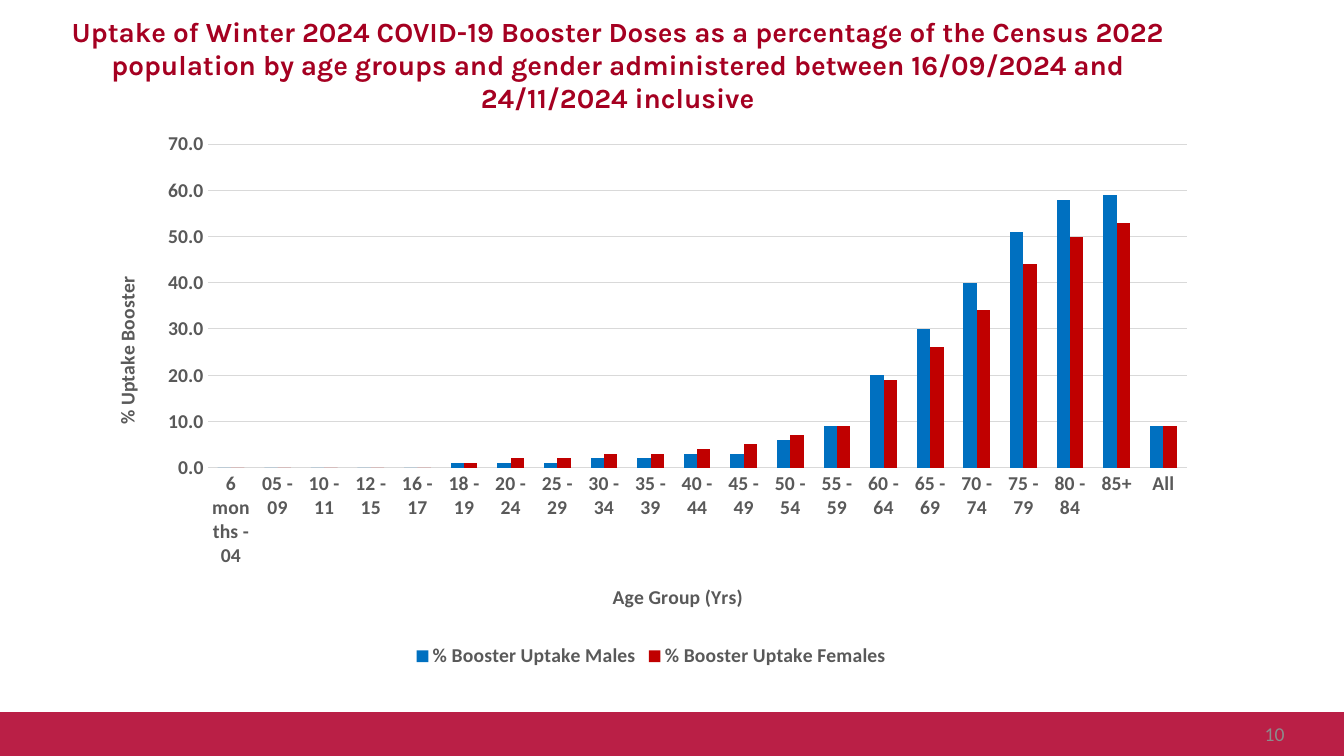
from lxml.etree import SubElement
from pptx import Presentation
from pptx.chart.data import CategoryChartData
from pptx.dml.color import RGBColor
from pptx.enum.chart import XL_CHART_TYPE, XL_LEGEND_POSITION, XL_TICK_MARK
from pptx.enum.shapes import MSO_SHAPE
from pptx.enum.text import MSO_ANCHOR, MSO_AUTO_SIZE, PP_ALIGN
from pptx.oxml import parse_xml
from pptx.oxml.ns import nsdecls, qn
from pptx.util import Inches, Pt

CRIMSON = RGBColor(0xA5, 0x00, 0x21)
BAND_RED = RGBColor(0xBA, 0x1F, 0x46)
NUMBER_GREY = RGBColor(0x8C, 0x8C, 0x8C)
LABEL_GREY = RGBColor(0x59, 0x59, 0x59)
GRID_GREY = RGBColor(0xD9, 0xD9, 0xD9)
MALE_BLUE = RGBColor(0x00, 0x70, 0xC0)
FEMALE_RED = RGBColor(0xC0, 0x00, 0x00)

CHART_WIDTH, CHART_HEIGHT = 11.08, 5.47
AGE_GROUPS = [
    "6 months - 04", "05 - 09", "10 - 11", "12 - 15", "16 - 17", "18 - 19", "20 - 24",
    "25 - 29", "30 - 34", "35 - 39", "40 - 44", "45 - 49", "50 - 54", "55 - 59",
    "60 - 64", "65 - 69", "70 - 74", "75 - 79", "80 - 84", "85+", "All",
]
UPTAKE = [
    ("% Booster Uptake Males", MALE_BLUE,
     [0, 0, 0, 0, 0, 1, 1, 1, 2, 2, 3, 3, 6, 9, 20, 30, 40, 51, 58, 59, 9]),
    ("% Booster Uptake Females", FEMALE_RED,
     [0, 0, 0, 0, 0, 1, 2, 2, 3, 3, 4, 5, 7, 9, 19, 26, 34, 44, 50, 53, 9]),
]


def style_font(font, size=14, color=LABEL_GREY, bold=True, name="Calibri"):
    font.size, font.bold, font.name = Pt(size), bold, name
    font.color.rgb = color


def write_text(frame, text, align=PP_ALIGN.CENTER, **style):
    frame.text = text
    paragraph = frame.paragraphs[0]
    paragraph.alignment = align
    style_font(paragraph.runs[0].font, **style)


def set_layout(parent, index, inner=False, **inches):
    previous = parent.find(qn("c:layout"))
    if previous is not None:
        parent.remove(previous)
    layout = parse_xml(f"<c:layout {nsdecls('c')}><c:manualLayout/></c:layout>")
    manual = layout[0]
    if inner:
        SubElement(manual, qn("c:layoutTarget")).set("val", "inner")
    for side in ("x", "y"):
        SubElement(manual, qn(f"c:{side}Mode")).set("val", "edge")
    for side, length in inches.items():
        whole = CHART_WIDTH if side in "xw" else CHART_HEIGHT
        SubElement(manual, qn(f"c:{side}")).set("val", str(length / whole))
    parent.insert(index, layout)


class UptakeSlide:
    """Draws the uptake slide in the report's style."""

    def __init__(self, presentation):
        self.slide = presentation.slides.add_slide(presentation.slide_layouts[5])

    def box(self, left, top, width, height):
        return Inches(left), Inches(top), Inches(width), Inches(height)

    def band(self, *place):
        footer = self.slide.shapes.add_shape(MSO_SHAPE.RECTANGLE, *self.box(*place))
        footer.shadow.inherit = False
        footer.fill.solid()
        footer.fill.fore_color.rgb = BAND_RED
        footer.line.color.rgb = BAND_RED
        footer.line.width = Pt(2)

    def fill_frame(self, holder, text, **style):
        frame = holder.text_frame
        frame.word_wrap = True
        frame.auto_size = MSO_AUTO_SIZE.NONE
        frame.vertical_anchor = MSO_ANCHOR.MIDDLE
        frame.margin_left = frame.margin_right = Inches(0.12)
        frame.margin_top = frame.margin_bottom = Inches(0.06)
        write_text(frame, text, **style)

    def title(self, text, *place):
        heading = self.slide.shapes.title
        heading.left, heading.top, heading.width, heading.height = self.box(*place)
        self.fill_frame(heading, text, size=19.8, color=CRIMSON, name="Karla")

    def page_number(self, text, *place):
        number = self.slide.shapes.add_textbox(*self.box(*place))
        self.fill_frame(number, text, align=PP_ALIGN.RIGHT, color=NUMBER_GREY, bold=False)

    def axis(self, axis, caption, x, y):
        axis.major_tick_mark = axis.minor_tick_mark = XL_TICK_MARK.NONE
        style_font(axis.tick_labels.font)
        write_text(axis.axis_title.text_frame, caption)
        set_layout(axis.axis_title._element, 1, x=x, y=y)

    def chart(self, left, top):
        data = CategoryChartData(number_format="0.0")
        data.categories = AGE_GROUPS
        for name, _, values in UPTAKE:
            data.add_series(name, values)
        chart = self.slide.shapes.add_chart(
            XL_CHART_TYPE.COLUMN_CLUSTERED,
            *self.box(left, top, CHART_WIDTH, CHART_HEIGHT), data).chart
        style_font(chart.font)
        chart.has_title = False
        chart.has_legend = True
        chart.legend.position = XL_LEGEND_POSITION.BOTTOM
        chart.legend.include_in_layout = False
        style_font(chart.legend.font)

        columns = chart.plots[0]
        columns.gap_width, columns.overlap = 150, 0
        columns.vary_by_categories = False
        for series, (_, color, _) in zip(columns.series, UPTAKE):
            series.format.fill.solid()
            series.format.fill.fore_color.rgb = color
            series.invert_if_negative = False

        ages, percent = chart.category_axis, chart.value_axis
        self.axis(ages, "Age Group (Yrs)", 5.12, 4.55)
        self.axis(percent, "% Uptake Booster", 0.17, 1.51)
        percent.minimum_scale, percent.maximum_scale, percent.major_unit = 0, 70, 10
        percent.tick_labels.number_format = "0.0"
        percent.tick_labels.number_format_is_linked = False
        percent.format.line.fill.background()
        percent.has_major_gridlines = True
        for line in (ages.format.line, percent.major_gridlines.format.line):
            line.color.rgb = GRID_GREY
            line.width = Pt(0.75)
        set_layout(chart._chartSpace.chart.plotArea, 0, inner=True,
                   x=1.14, y=0.23, w=9.71, h=3.21)


def main():
    presentation = Presentation()
    presentation.slide_width, presentation.slide_height = Inches(13.33), Inches(7.5)
    page = UptakeSlide(presentation)
    page.band(0, 7.08, 13.33, 0.42)
    page.title("Uptake of Winter 2024 COVID-19 Booster Doses as a percentage of the "
               "Census 2022 population by age groups and gender administered between "
               "16/09/2024 and 24/11/2024 inclusive", 0.25, 0.08, 11.75, 1.12)
    page.page_number("10", 9.75, 7.08, 3.11, 0.4)
    page.chart(0.92, 1.2)
    presentation.save("out.pptx")


if __name__ == "__main__":
    main()
